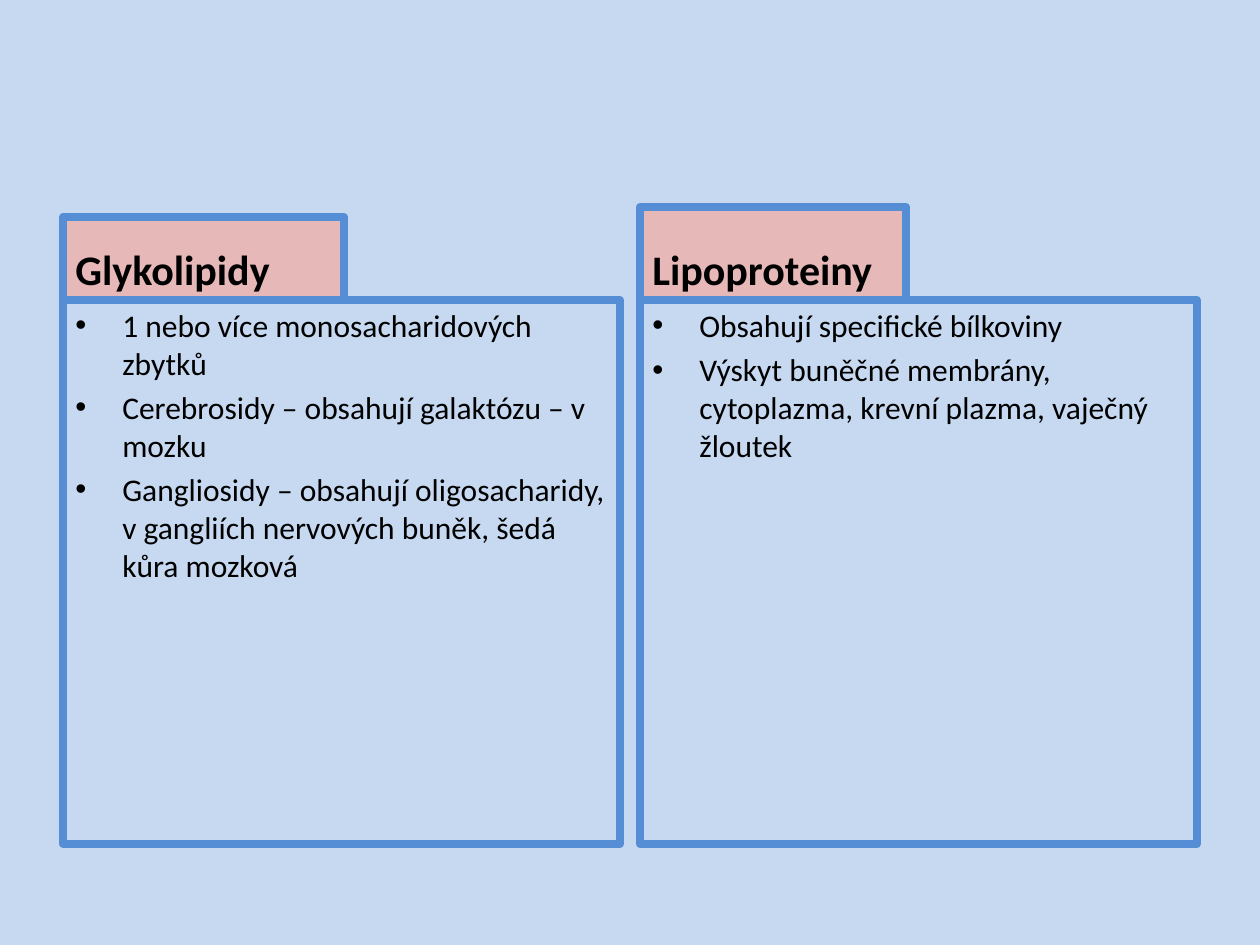
from lxml import etree
from pptx import Presentation
from pptx.dml.color import RGBColor
from pptx.enum.text import MSO_ANCHOR
from pptx.oxml.ns import qn
from pptx.util import Emu, Pt

TOP, BOTTOM = MSO_ANCHOR.TOP, MSO_ANCHOR.BOTTOM

BACKGROUND = RGBColor(0xC6, 0xD9, 0xF1)
HEADING_FILL = RGBColor(0xE6, 0xB9, 0xB8)
BORDER = RGBColor(0x55, 0x8E, 0xD5)
BLACK = RGBColor(0x00, 0x00, 0x00)

HEADING_FONT = {"name": "Calibri", "size": Pt(24), "bold": True}
BODY_FONT = {"name": "Calibri", "size": Pt(18), "bold": False}

BODY_TOP, BODY_WIDTH, BODY_HEIGHT = 300, 557, 544
BULLET_INDENT = 47

COLUMNS = [
    (63, 281, 83, "Glykolipidy", [
        "1 nebo více monosacharidových zbytků",
        "Cerebrosidy – obsahují galaktózu – v mozku",
        "Gangliosidy – obsahují oligosacharidy, v gangliích nervových buněk, šedá kůra mozková",
    ]),
    (640, 266, 93, "Lipoproteiny", [
        "Obsahují specifické bílkoviny",
        "Výskyt buněčné membrány, cytoplazma, krevní plazma, vaječný žloutek",
    ]),
]


def px(n):
    return Emu(round(n * 914400 / 126))


def add_box(slide, box, anchor):
    sp = slide.shapes.add_textbox(*map(px, box))
    sp.line.color.rgb = BORDER
    sp.line.width = Pt(4.5)
    tf = sp.text_frame
    tf.word_wrap = True
    tf.vertical_anchor = anchor
    return sp


def write(p, text, font):
    p.space_before = Pt(font["size"].pt * 0.2)
    r = p.add_run()
    r.text = text
    for name, value in font.items():
        setattr(r.font, name, value)
    r.font.color.rgb = BLACK


def add_bullet(p):
    pPr = p._p.get_or_add_pPr()
    pPr.set("marL", str(px(BULLET_INDENT)))
    pPr.set("indent", str(-px(BULLET_INDENT)))
    etree.SubElement(pPr, qn("a:buFont")).set("typeface", "Arial")
    etree.SubElement(pPr, qn("a:buChar")).set("char", "•")


def add_heading(slide, left, width, height, text):
    sp = add_box(slide, (left, BODY_TOP - height, width, height), BOTTOM)
    sp.fill.solid()
    sp.fill.fore_color.rgb = HEADING_FILL
    write(sp.text_frame.paragraphs[0], text, HEADING_FONT)


def add_body(slide, left, items):
    sp = add_box(slide, (left, BODY_TOP, BODY_WIDTH, BODY_HEIGHT), TOP)
    tf = sp.text_frame
    for i, text in enumerate(items):
        p = tf.add_paragraph() if i else tf.paragraphs[0]
        write(p, text, BODY_FONT)
        add_bullet(p)


def main():
    prs = Presentation()
    prs.slide_width, prs.slide_height = px(1260), px(945)
    slide = prs.slides.add_slide(prs.slide_layouts[6])
    fill = slide.background.fill
    fill.solid()
    fill.fore_color.rgb = BACKGROUND
    for left, width, height, heading, items in COLUMNS:
        add_heading(slide, left, width, height, heading)
        add_body(slide, left, items)
    prs.save("out.pptx")


if __name__ == "__main__":
    main()
